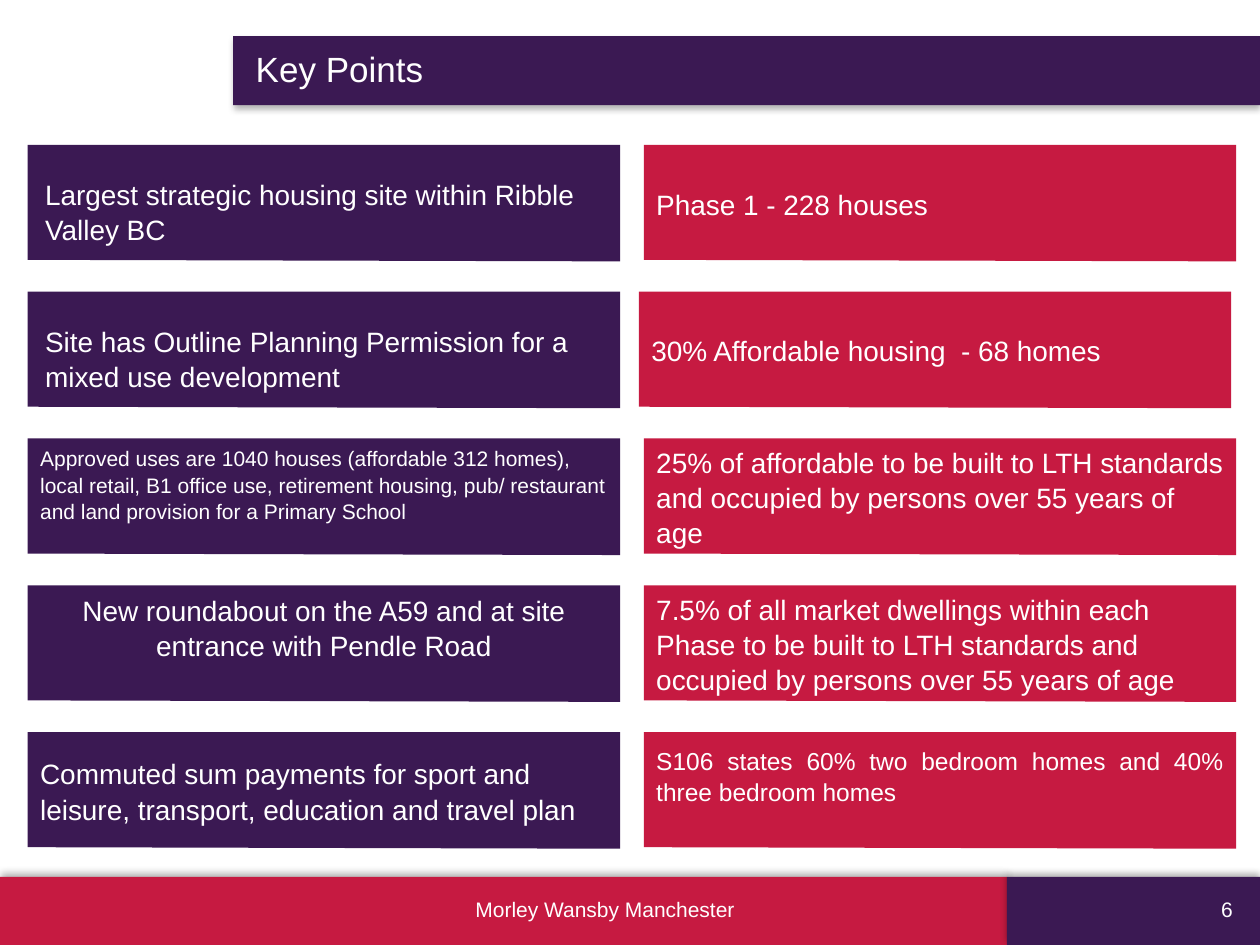
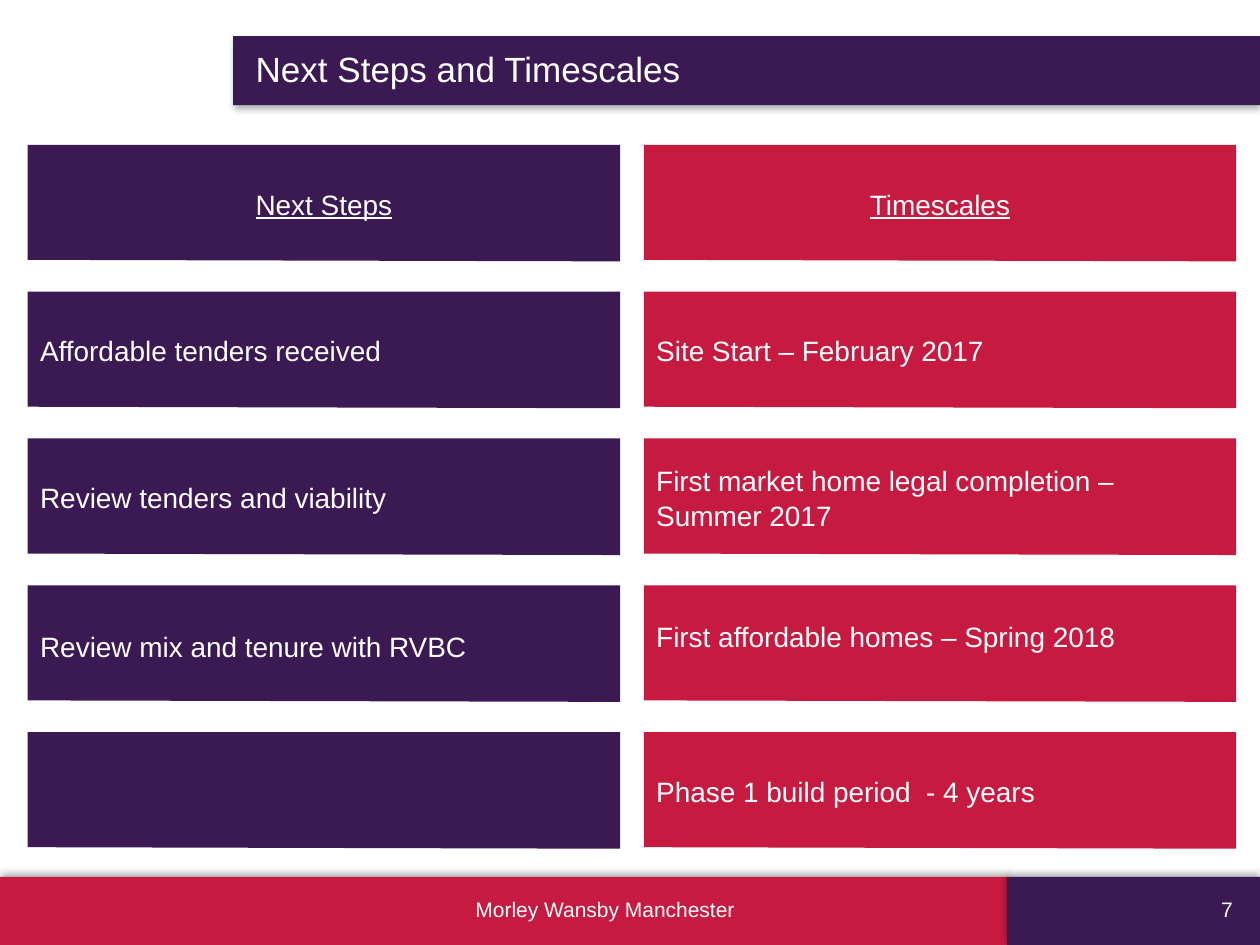
from dataclasses import dataclass

from lxml import etree
from pptx import Presentation
from pptx import util as u
from pptx.dml.color import RGBColor
from pptx.enum import shapes, text
from pptx.oxml import ns

PURPLE = RGBColor(0x3B, 0x19, 0x53)
RED = RGBColor(0xC6, 0x1A, 0x41)
WHITE = RGBColor(0xFF, 0xFF, 0xFF)
FONT = "Arial"
FOOTER = "Morley Wansby Manchester"

SLIDE_WIDTH, SLIDE_HEIGHT = 25.4, 19.05
COLUMNS = ((0.56, PURPLE), (12.98, RED))
GRID_TOP, ROW_PITCH = 2.92, 2.96
PANEL_WIDTH, PANEL_HEIGHT, PANEL_SLANT = 11.94, 2.35, 0.03
INSET_X, INSET_Y = 0.25, 0.13

LEFT = text.PP_ALIGN.LEFT
CENTER = text.PP_ALIGN.CENTER
RIGHT = text.PP_ALIGN.RIGHT
JUSTIFY = text.PP_ALIGN.JUSTIFY


@dataclass
class Point:
    """One panel's wording, text style and small offsets in cm."""
    words: str = ""
    size: int = 16
    align: int = LEFT
    lift: float = 0
    shift: float = 0
    underline: bool = False
    caption: bool = False


def write(frame, words, size, align=LEFT, underline=False, spacing=1.0):
    """Write one white paragraph into a vertically centred text frame."""
    frame.word_wrap = True
    frame.auto_size = text.MSO_AUTO_SIZE.NONE
    frame.vertical_anchor = text.MSO_ANCHOR.MIDDLE
    paragraph = frame.paragraphs[0]
    paragraph.alignment = align
    paragraph.line_spacing = spacing
    run = paragraph.add_run()
    run.text = words
    run.font.name = FONT
    run.font.size = u.Pt(size)
    run.font.color.rgb = WHITE
    run.font.underline = underline


def paint(shape, color):
    """Give a shape a plain fill without outline or shadow."""
    shape.shadow.inherit = False
    shape.fill.solid()
    shape.fill.fore_color.rgb = color
    shape.line.fill.background()


def add_band(slide, box, color, direction):
    """Add a coloured band with a soft shadow cast in degrees."""
    band = slide.shapes.add_shape(shapes.MSO_SHAPE.RECTANGLE, *map(u.Cm, box))
    paint(band, color)
    effects = band.element.spPr.find(ns.qn("a:effectLst"))
    shadow = etree.SubElement(
        effects, ns.qn("a:outerShdw"), blurRad=str(u.Pt(4)), dist=str(u.Pt(2)),
        dir=str(direction * 60000), algn="ctr", rotWithShape="0")
    tint = etree.SubElement(shadow, ns.qn("a:srgbClr"), val="000000")
    etree.SubElement(tint, ns.qn("a:alpha"), val="30000")


def add_label(slide, box, words, size, align, **style):
    """Add a text box and return its frame."""
    frame = slide.shapes.add_textbox(*map(u.Cm, box)).text_frame
    write(frame, words, size, align, **style)
    return frame


def add_header(slide, box, words):
    """Place the title placeholder over its purple band."""
    left, top, width, height = box
    add_band(slide, box, PURPLE, 90)
    title = slide.shapes.title
    title.left, title.top = u.Cm(left + 0.2), u.Cm(top - 0.2)
    title.width, title.height = u.Cm(width - 0.2), u.Cm(height + 0.3)
    write(title.text_frame, words, 20)
    title.element.getparent().append(title.element)


def add_footer(slide, box, number):
    """Add the two footer bands with the name and the slide number."""
    left, top, width, height = box
    split = 20.3
    add_band(slide, (left, top, split, height), RED, 270)
    add_band(slide, (left + split, top, width - split, height), PURPLE, 270)
    add_label(slide, (left + 4.5, top + 0.26, 15.4, 0.79), FOOTER, 12, CENTER)
    add_label(slide, (left + split + 0.2, top + 0.26, 4.6, 0.79), str(number), 12, RIGHT)


def add_panel(slide, box, color, point):
    """Add one slightly slanted panel and its text."""
    left, top, width, height = box
    corners = [(left + width, top), (left + width, top + height),
               (left, top + height - PANEL_SLANT)]
    builder = slide.shapes.build_freeform(u.Cm(left), u.Cm(top))
    builder.add_line_segments([(u.Cm(x), u.Cm(y)) for x, y in corners])
    panel = builder.convert_to_shape()
    paint(panel, color)
    if not point.words:
        return
    if point.caption:
        frame = add_label(slide, (left + 0.25, top + 0.53, 11.4, 1.6), point.words,
                          point.size, point.align, spacing=1.05)
        frame.margin_left = frame.margin_right = u.Cm(0.1)
        frame.margin_top = frame.margin_bottom = u.Cm(0.1)
        return
    frame = panel.text_frame
    frame.margin_left = frame.margin_right = u.Cm(INSET_X)
    frame.margin_top = u.Cm(INSET_Y + max(-point.lift, 0))
    frame.margin_bottom = u.Cm(INSET_Y + max(point.lift, 0))
    write(frame, point.words, point.size, point.align, point.underline, 1.05)


def add_panel_slide(presentation, number, title, rows):
    """Build a slide with a header, a two-column panel grid and a footer."""
    slide = presentation.slides.add_slide(presentation.slide_layouts[5])
    add_header(slide, (4.7, 0.73, 20.7, 1.39), title)
    add_footer(slide, (0, 17.68, SLIDE_WIDTH, 1.37), number)
    for index, row in enumerate(rows):
        top = GRID_TOP + index * ROW_PITCH
        for (left, color), point in zip(COLUMNS, row):
            box = (left + point.shift, top, PANEL_WIDTH, PANEL_HEIGHT)
            add_panel(slide, box, color, point)


KEY_POINTS = [
    (Point("Largest strategic housing site within Ribble Valley BC", caption=True),
     Point("Phase 1 - 228 houses")),
    (Point("Site has Outline Planning Permission for a mixed use development", caption=True),
     Point("30% Affordable housing  - 68 homes", shift=-0.1)),
    (Point("Approved uses are 1040 houses (affordable 312 homes), local retail, "
           "B1 office use, retirement housing, pub/ restaurant and land provision "
           "for a Primary School", size=12, lift=0.5),
     Point("25% of affordable to be built to LTH standards and occupied by "
           "persons over 55 years of age")),
    (Point("New roundabout on the A59 and at site entrance with Pendle Road",
           align=CENTER, lift=0.68),
     Point("7.5% of all market dwellings within each Phase to be built to LTH "
           "standards and occupied by persons over 55 years of age")),
    (Point("Commuted sum payments for sport and leisure, transport, education "
           "and travel plan"),
     Point("S106 states 60% two bedroom homes and 40% three bedroom homes",
           size=14, align=JUSTIFY, lift=0.6)),
]

NEXT_STEPS = [
    (Point("Next Steps", align=CENTER, underline=True),
     Point("Timescales", align=CENTER, underline=True)),
    (Point("Affordable tenders received"), Point("Site Start – February 2017")),
    (Point("Review tenders and viability"),
     Point("First market home legal completion – Summer 2017")),
    (Point("Review mix and tenure with RVBC", lift=-0.08),
     Point("First affordable homes – Spring 2018", lift=0.34)),
    (Point(), Point("Phase 1 build period  - 4 years", align=JUSTIFY)),
]


def main():
    """Build and save the presentation."""
    presentation = Presentation()
    presentation.slide_width = u.Cm(SLIDE_WIDTH)
    presentation.slide_height = u.Cm(SLIDE_HEIGHT)
    add_panel_slide(presentation, 6, "Key Points", KEY_POINTS)
    add_panel_slide(presentation, 7, "Next Steps and Timescales", NEXT_STEPS)
    presentation.save("out.pptx")


if __name__ == "__main__":
    main()
